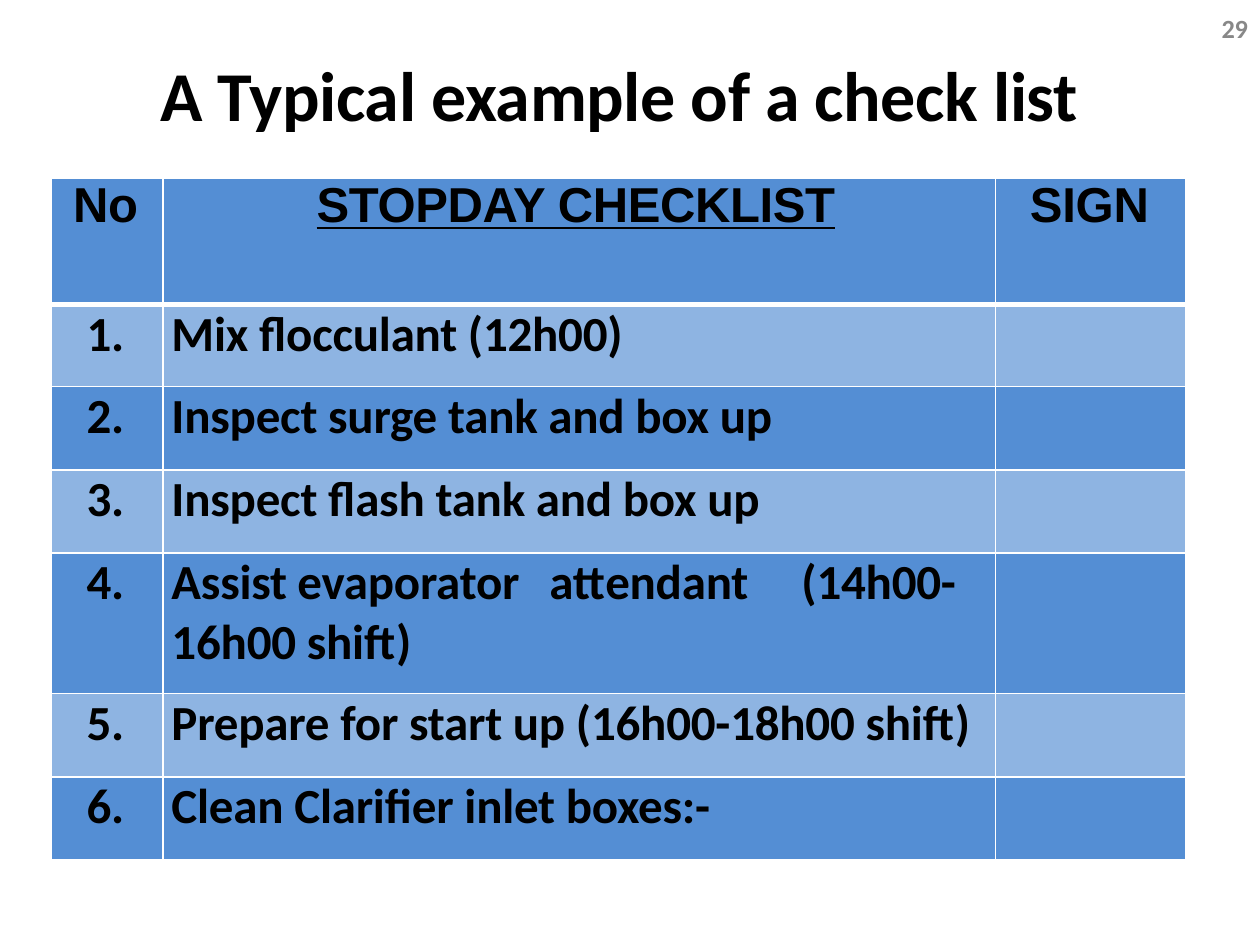
from dataclasses import dataclass

import pptx
import pptx.dml.color
import pptx.oxml.ns
import pptx.util
from lxml import etree

Pt = pptx.util.Pt

BLACK, GREY, WHITE = "000000", "888888", "FFFFFF"
DARK_BLUE, LIGHT_BLUE = "548ED4", "8EB4E2"
COLUMN_WIDTHS = (63.5, 476, 108.5)
HEADER_HEIGHT = 72
NUMBER_INDENT, TASK_INDENT = 20, 5


@dataclass(frozen=True)
class Style:
    size: float
    font: str = "Calibri"
    color: str = BLACK
    underline: bool = False
    spacing: float = 0


@dataclass(frozen=True)
class Line:
    text: str
    indent: float
    style: Style
    tabs: tuple[float, ...] = ()


@dataclass(frozen=True)
class Task:
    lines: tuple[str, ...]
    height: float = 47.5
    tabs: tuple[float, ...] = ()


BODY = Style(28, spacing=-0.1)
HEADING = Style(28, "Arial", spacing=-0.1)
HEADERS = (
    Line("No", 12.25, HEADING),
    Line("STOPDAY CHECKLIST", 88, Style(28, "Arial", underline=True, spacing=-0.2)),
    Line("SIGN", 19.5, HEADING),
)
TASKS = (
    Task(("Mix flocculant (12h00)",), height=47),
    Task(("Inspect surge tank and box up",)),
    Task(("Inspect flash tank and box up",)),
    Task(
        ("Assist\tevaporator\tattendant\t(14h00-", "16h00 shift)"),
        height=80.5,
        tabs=(93.5, 244, 381),
    ),
    Task(("Prepare for start up (16h00-18h00 shift)",)),
    Task(("Clean Clarifier inlet boxes:-",)),
)


def rgb(color: str) -> pptx.dml.color.RGBColor:
    return pptx.dml.color.RGBColor.from_string(color)


def add_child(parent, tag: str, **attributes: str):
    child = etree.SubElement(parent, pptx.oxml.ns.qn(tag))
    for name, value in attributes.items():
        child.set(name, value)
    return child


def write_lines(text_frame, lines: tuple[Line, ...]) -> None:
    for index, line in enumerate(lines):
        paragraph = text_frame.add_paragraph() if index else text_frame.paragraphs[0]
        properties = paragraph._p.get_or_add_pPr()
        properties.set("marL", str(Pt(line.indent)))
        properties.set("indent", "0")
        if line.tabs:
            tab_list = add_child(properties, "a:tabLst")
            for position in line.tabs:
                add_child(tab_list, "a:tab", pos=str(Pt(position)), algn="l")
        run = paragraph.add_run()
        run.text = line.text
        font = run.font
        font.name, font.size, font.bold = line.style.font, Pt(line.style.size), True
        font.underline = line.style.underline
        font.color.rgb = rgb(line.style.color)
        run._r.get_or_add_rPr().set("spc", str(round(line.style.spacing * 100)))


def add_text(slide, left: float, top: float, width: float, height: float, line: Line) -> None:
    text_box = slide.shapes.add_textbox(Pt(left), Pt(top), Pt(width), Pt(height))
    frame = text_box.text_frame
    frame.word_wrap = True
    frame.margin_left = frame.margin_right = frame.margin_top = frame.margin_bottom = 0
    write_lines(frame, (line,))


def format_cell(cell, color: str, top_width: float, bottom_width: float) -> None:
    """Remove the margins, draw white borders and fill the cell."""
    cell.margin_left = cell.margin_right = cell.margin_top = cell.margin_bottom = 0
    properties = cell._tc.get_or_add_tcPr()
    widths = {"a:lnL": 1, "a:lnR": 1, "a:lnT": top_width, "a:lnB": bottom_width}
    for tag, width in widths.items():
        border = add_child(properties, tag, w=str(Pt(width)))
        add_child(add_child(border, "a:solidFill"), "a:srgbClr", val=WHITE)
    cell.fill.solid()
    cell.fill.fore_color.rgb = rgb(color)


def add_checklist(slide, left: float, top: float) -> None:
    heights = (HEADER_HEIGHT, *(task.height for task in TASKS))
    table = slide.shapes.add_table(
        len(heights), len(COLUMN_WIDTHS),
        Pt(left), Pt(top), Pt(sum(COLUMN_WIDTHS)), Pt(sum(heights)),
    ).table
    table.first_row = table.horz_banding = False
    for column, width in zip(table.columns, COLUMN_WIDTHS):
        column.width = Pt(width)
    for index, (row, height) in enumerate(zip(table.rows, heights)):
        row.height = Pt(height)
        for cell in row.cells:
            format_cell(
                cell,
                LIGHT_BLUE if index % 2 else DARK_BLUE,
                top_width=3 if index == 1 else 1,
                bottom_width=3 if index == 0 else 1,
            )
    for column, header in enumerate(HEADERS):
        write_lines(table.cell(0, column).text_frame, (header,))
    for number, task in enumerate(TASKS, start=1):
        write_lines(
            table.cell(number, 0).text_frame, (Line(f"{number}.", NUMBER_INDENT, BODY),)
        )
        task_lines = tuple(
            Line(text, TASK_INDENT, BODY, task.tabs if "\t" in text else ())
            for text in task.lines
        )
        write_lines(table.cell(number, 1).text_frame, task_lines)


def main() -> None:
    presentation = pptx.Presentation()
    presentation.slide_width, presentation.slide_height = Pt(720), Pt(540)
    slide = presentation.slides.add_slide(presentation.slide_layouts[6])
    title = Line("A Typical example of a check list", 6.5, Style(40, spacing=-0.2))
    add_text(slide, 85, 29.5, 550, 66, title)
    page_number = Line("29", 1, Style(15, color=GREY, spacing=-0.1))
    add_text(slide, 697, 7, 17.5, 17.5, page_number)
    add_checklist(slide, 29.5, 102)
    presentation.save("out.pptx")


if __name__ == "__main__":
    main()
